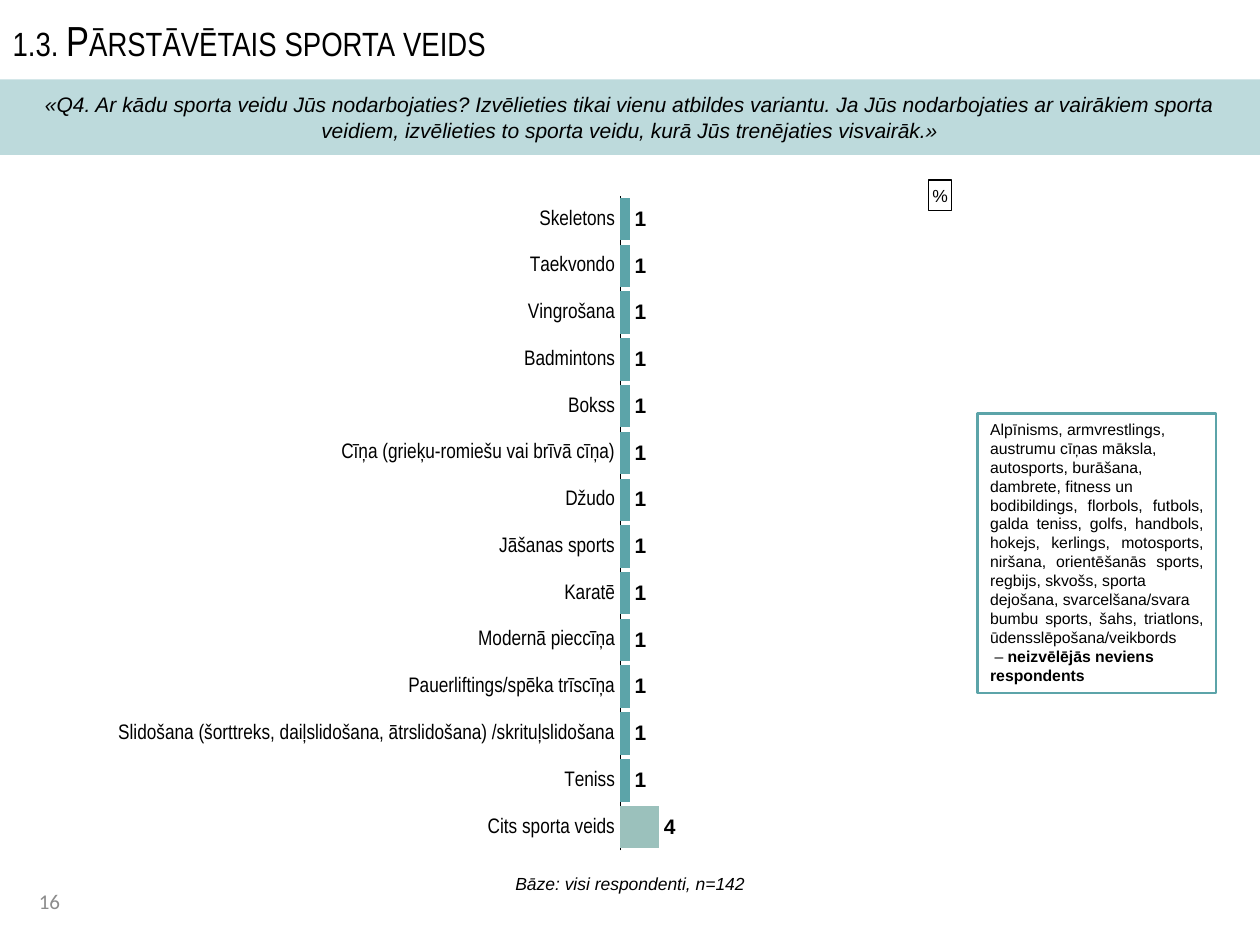
import pptx
import pptx.util
import pptx.chart.data
import pptx.dml.color
import pptx.enum.chart
import pptx.enum.shapes
import pptx.enum.text
import pptx.oxml
import lxml.etree
from pptx.util import Inches, Pt

ALIGN = pptx.enum.text.PP_ALIGN
MIDDLE = pptx.enum.text.MSO_ANCHOR.MIDDLE
TOP = pptx.enum.text.MSO_ANCHOR.TOP
COLORS = {"teal": "5CA4A9", "sage": "9BC1BC", "black": "000000",
          "white": "FFFFFF", "gray": "8C8C8C"}

# Content
TITLE = "1.3. Pārstāvētais sporta veids"
QUESTION = ("«Q4. Ar kādu sporta veidu Jūs nodarbojaties? Izvēlieties tikai vienu "
            "atbildes variantu. Ja Jūs nodarbojaties ar vairākiem sporta veidiem, "
            "izvēlieties to sporta veidu, kurā Jūs trenējaties visvairāk.»")
BASE = "Bāze: visi respondenti, n=142"
SPORTS = [
    ("Skeletons", 1), ("Taekvondo", 1), ("Vingrošana", 1), ("Badmintons", 1),
    ("Bokss", 1), ("Cīņa (grieķu-romiešu vai brīvā cīņa)", 1), ("Džudo", 1),
    ("Jāšanas sports", 1), ("Karatē", 1), ("Modernā pieccīņa", 1),
    ("Pauerliftings/spēka trīscīņa", 1),
    ("Slidošana (šorttreks, daiļslidošana, ātrslidošana) /skrituļslidošana", 1),
    ("Teniss", 1), ("Cits sporta veids", 4),
]
UNCHOSEN = [
    "Alpīnisms, armvrestlings,", "austrumu cīņas māksla,",
    "autosports, burāšana,", "dambrete, fitness un",
    "bodibildings, florbols, futbols, galda teniss, golfs, handbols, "
    "hokejs, kerlings, motosports, niršana, orientēšanās sports, "
    "regbijs, skvošs, sporta",
    "dejošana, svarcelšana/svara",
    "bumbu sports, šahs, triatlons, ūdensslēpošana/veikbords",
]
# Each paragraph is a list of (text, bold)
NOTE = [[(line, False)] for line in UNCHOSEN]
NOTE += [[(" – ", False), ("neizvēlējās neviens", True)], [("respondents", True)]]


def rgb(name):
    return pptx.dml.color.RGBColor.from_string(COLORS[name])


def set_font(font, size, name="Arial", color="black", **flags):
    font.size, font.name = Pt(size), name
    font.color.rgb = rgb(color)
    for flag, value in flags.items():
        setattr(font, flag, value)


def add_box(page, place, paragraphs, size, align, anchor=MIDDLE, fill=None,
            line=None, line_width=0.75, margin=0.1, **font):
    box = page.shapes.add_shape(pptx.enum.shapes.MSO_SHAPE.RECTANGLE,
                                *map(Inches, place))
    box.shadow.inherit = False
    if fill:
        box.fill.solid()
        box.fill.fore_color.rgb = rgb(fill)
    else:
        box.fill.background()
    if line:
        box.line.color.rgb = rgb(line)
        box.line.width = Pt(line_width)
    else:
        box.line.fill.background()
    frame = box.text_frame
    frame.word_wrap = True
    frame.vertical_anchor = anchor
    frame.margin_left = frame.margin_right = Inches(margin)
    for index, spans in enumerate(paragraphs):
        para = frame.add_paragraph() if index else frame.paragraphs[0]
        para.alignment = align
        set_font(para.font, size, **font)
        for text, bold in spans:
            span = para.add_run()
            span.text = text
            span.font.bold = bold
    return box


def add_title(page):
    title = page.shapes.title
    title.left, title.top, title.width, title.height = map(Inches, (0, 0, 10, 0.63))
    frame = title.text_frame
    frame.text = TITLE
    frame.auto_size = pptx.enum.text.MSO_AUTO_SIZE.NONE
    frame.vertical_anchor = MIDDLE
    para = frame.paragraphs[0]
    para.alignment = ALIGN.LEFT
    set_font(para.font, 24, "Arial Narrow")
    para.runs[0].font._element.set("cap", "small")


def set_plot_area(chart, **place):
    """Fix the inner plot area as fractions of the chart."""
    area = chart._chartSpace.chart.plotArea
    for old in area.findall(pptx.oxml.ns.qn("c:layout")):
        area.remove(old)
    layout = lxml.etree.Element(pptx.oxml.ns.qn("c:layout"))
    manual = lxml.etree.SubElement(layout, pptx.oxml.ns.qn("c:manualLayout"))
    settings = {"layoutTarget": "inner", "xMode": "edge", "yMode": "edge", **place}
    for tag, value in settings.items():
        lxml.etree.SubElement(manual, pptx.oxml.ns.qn("c:" + tag), val=str(value))
    area.insert(0, layout)


def add_sports_chart(page):
    data = pptx.chart.data.CategoryChartData(number_format="0")
    data.categories = [sport for sport, value in SPORTS]
    data.add_series("Series 1", [value for sport, value in SPORTS])
    chart = page.shapes.add_chart(
        pptx.enum.chart.XL_CHART_TYPE.BAR_CLUSTERED,
        *map(Inches, (0.79, 1.39, 8.43, 5.47)), data).chart
    chart.has_legend = chart.has_title = False
    set_font(chart.font, 9)
    set_plot_area(chart, x=0.49, y=0.03, w=0.46, h=0.95)

    sports_axis, percent_axis = chart.category_axis, chart.value_axis
    sports_axis.reverse_order = True
    sports_axis.major_tick_mark = pptx.enum.chart.XL_TICK_MARK.NONE
    set_font(sports_axis.tick_labels.font, 12, "Arial Narrow")
    sports_axis.format.line.color.rgb = rgb("black")
    sports_axis.format.line.width = Pt(0.25)
    percent_axis.minimum_scale, percent_axis.maximum_scale = 0, 50
    percent_axis.has_major_gridlines = False
    percent_axis.visible = False

    plot = chart.plots[0]
    plot.gap_width = 10
    plot.vary_by_categories = False
    series = plot.series[0]
    other_sport = series.points[len(SPORTS) - 1]
    for part, color in ((series, "teal"), (other_sport, "sage")):
        part.format.fill.solid()
        part.format.fill.fore_color.rgb = rgb(color)
    labels = series.data_labels
    labels.show_value = True
    labels.number_format, labels.number_format_is_linked = "0", False
    labels.position = pptx.enum.chart.XL_LABEL_POSITION.OUTSIDE_END
    set_font(labels.font, 12, bold=True)


def main():
    deck = pptx.Presentation()
    deck.slide_width, deck.slide_height = Inches(10), Inches(7.5)
    page = deck.slides.add_slide(deck.slide_layouts[5])
    add_title(page)

    # Page number and sample base
    add_box(page, (0.21, 6.95, 1.06, 0.4), [[("16", None)]], 12, ALIGN.LEFT,
            name="Calibri", color="gray")
    add_box(page, (0, 6.78, 10, 0.47), [[(BASE, None)]], 10, ALIGN.CENTER, italic=True)

    # Question band, 40 % opaque
    band = add_box(page, (0, 0.63, 10, 0.6), [[(QUESTION, None)]], 12, ALIGN.CENTER,
                   fill="teal", italic=True)
    color = band.fill._xPr.find(".//" + pptx.oxml.ns.qn("a:srgbClr"))
    lxml.etree.SubElement(color, pptx.oxml.ns.qn("a:alpha"), val="40000")

    # Chart with its unit, and the sports nobody chose
    add_sports_chart(page)
    add_box(page, (7.37, 1.43, 0.18, 0.24), [[("%", None)]], 10, ALIGN.CENTER,
            line="black", margin=0)
    add_box(page, (7.76, 3.28, 1.89, 2.22), NOTE, 9, ALIGN.JUSTIFY, anchor=TOP,
            fill="white", line="teal", line_width=1.5)
    deck.save("out.pptx")


if __name__ == "__main__":
    main()
